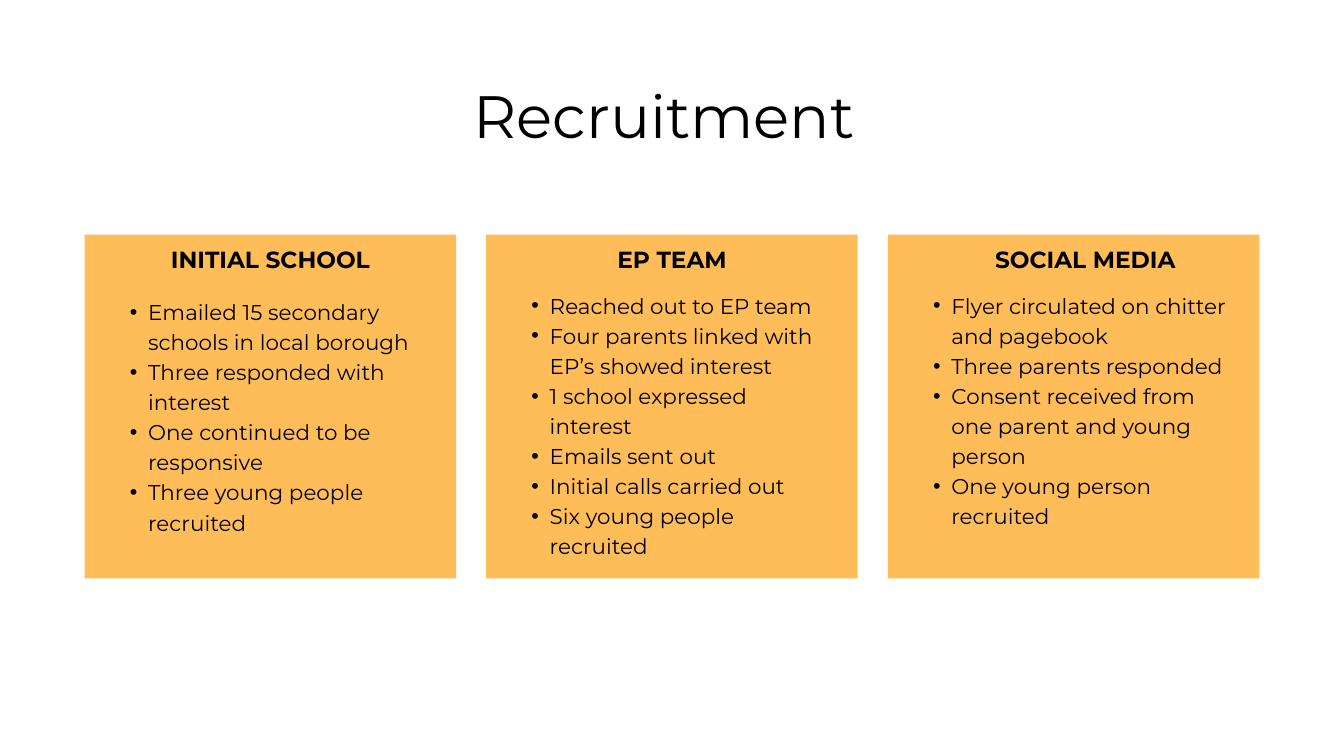
"""Build the Recruitment slide: a title above three cards of recruitment routes."""
from lxml import etree
from pptx import Presentation, util as u
from pptx.dml.color import RGBColor
from pptx.enum import shapes, text
from pptx.oxml import ns

THEME = {
    "card": RGBColor.from_string("FFBD59"),
    "title": {"name": "Montserrat", "size": u.Pt(64), "bold": False},
    "heading": {"name": "Montserrat", "size": u.Pt(25), "bold": True},
    "body": {"name": "Montserrat", "size": u.Pt(23), "bold": False},
    "ink": RGBColor.from_string("000000"),
}
FRAME = {
    "margin_left": 0, "margin_top": 0, "margin_right": 0, "margin_bottom": 0,
    "word_wrap": True, "auto_size": text.MSO_AUTO_SIZE.SHAPE_TO_FIT_TEXT,
}
CENTRED = {"alignment": text.PP_ALIGN.CENTER}
BULLETED = {"alignment": text.PP_ALIGN.LEFT, "level": 1}


def set_all(target, values):
    for attribute, value in values.items():
        setattr(target, attribute, value)


def write(box, lines, role, layout, bullet=None):
    frame = slide.shapes.add_textbox(*(u.Cm(length) for length in box)).text_frame
    set_all(frame, FRAME)
    for index, line in enumerate(lines):
        paragraph = frame.add_paragraph() if index else frame.paragraphs[0]
        set_all(paragraph, {**layout, "line_spacing": u.Pt(THEME[role]["size"].pt * 1.4)})
        run = paragraph.add_run()
        run.text = line
        set_all(run.font, THEME[role])
        run.font.color.rgb = THEME["ink"]
        if bullet:
            properties = paragraph._p.get_or_add_pPr()
            properties.set("marL", str(u.Cm(1.37)))
            properties.set("indent", str(u.Cm(-0.69)))
            etree.SubElement(properties, ns.qn("a:buFont")).set("typeface", "Arial")
            etree.SubElement(properties, ns.qn("a:buChar")).set("char", bullet)


deck = Presentation()
set_all(deck, {"slide_width": u.Cm(50.8), "slide_height": u.Cm(28.58)})
slide = deck.slides.add_slide(deck.slide_layouts[6])

write((8.33, 2.51, 33.53, 3.05), ["Recruitment"], "title", CENTRED)

routes = [
    ("INITIAL SCHOOL", 0, 11.15, [
        "Emailed 15 secondary schools in local borough",
        "Three responded with interest",
        "One continued to be responsive",
        "Three young people recruited",
    ]),
    ("EP TEAM", 0, 10.9, [
        "Reached out to EP team",
        "Four parents linked with EP’s showed interest",
        "1 school expressed interest",
        "Emails sent out",
        "Initial calls carried out",
        "Six young people recruited",
    ]),
    ("SOCIAL MEDIA", 0.44, 10.9, [
        "Flyer circulated on chitter and pagebook",
        "Three parents responded",
        "Consent received from one parent and young person",
        "One young person recruited",
    ]),
]
card_width, card_height, card_top, pitch = 14.04, 13, 8.87, 15.18
for column, (heading, heading_shift, steps_top, steps) in enumerate(routes):
    left = 3.2 + column * pitch
    card = slide.shapes.add_shape(
        shapes.MSO_SHAPE.RECTANGLE,
        u.Cm(left), u.Cm(card_top), u.Cm(card_width), u.Cm(card_height),
    )
    card.shadow.inherit = False
    card.fill.solid()
    card.fill.fore_color.rgb = THEME["card"]
    card.line.fill.background()
    write((left + 1.03, steps_top, 11.99, 10.03), steps, "body", BULLETED, "•")
    write((left + 2 + heading_shift, 9.09, card_width - 4, 1.14), [heading], "heading", CENTRED)

deck.save("out.pptx")
